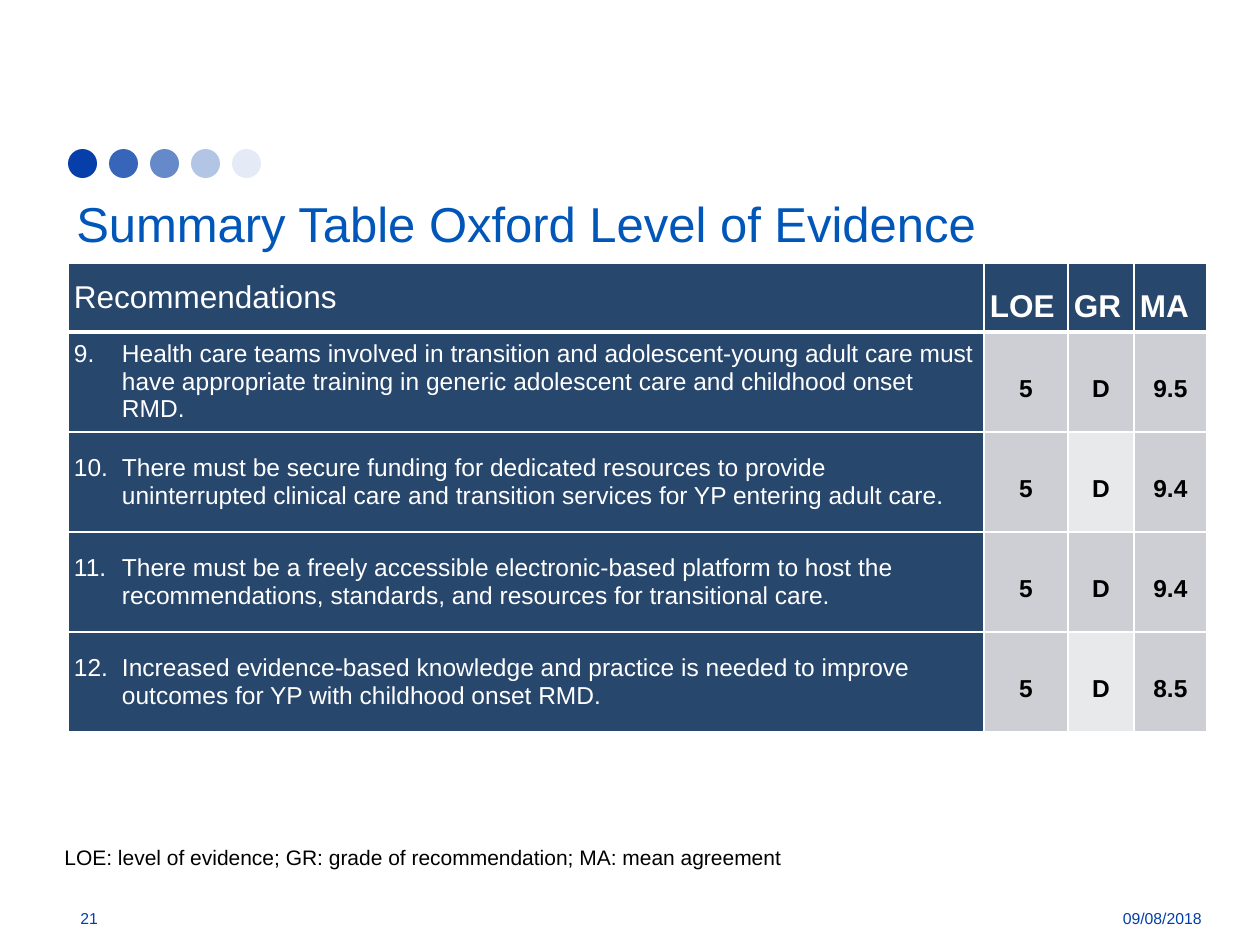
from dataclasses import dataclass
from typing import Any, NamedTuple

from lxml.etree import SubElement
from pptx import Presentation
from pptx.dml.color import RGBColor as Rgb
from pptx.enum.shapes import MSO_SHAPE as Preset
from pptx.enum.text import MSO_ANCHOR as Anchor, PP_ALIGN as Align
from pptx.oxml import parse_xml
from pptx.oxml.ns import nsdecls, qn
from pptx.util import Emu, Pt

EMU_PER_PX = 914400 / 126


@dataclass(frozen=True)
class Theme:
    face: str = "Arial"
    title: str = "0056B9"
    footer: str = "003FA8"
    dot: str = "063FA9"
    navy: str = "28476D"
    grey: str = "CDCFD4"
    pale: str = "E8E9EB"
    white: str = "FFFFFF"
    black: str = "000000"
    title_size: int = 28
    header_size: int = 18
    body_size: int = 14
    legend_size: int = 12
    footer_size: int = 9


class Box(NamedTuple):
    left: int
    top: int
    width: int
    height: int


@dataclass(frozen=True)
class Label:
    text: str
    box: Box
    size: int
    color: str
    align: Align = Align.LEFT
    wrap: bool = True


@dataclass(frozen=True)
class Recommendation:
    number: int
    text: str
    level: str
    grade: str
    agreement: str


@dataclass(frozen=True)
class CellStyle:
    fill: str
    color: str
    size: int
    bold: bool = False
    align: Align = Align.LEFT
    spacing: float | None = None
    bottom: int = 1
    top: int = 1


THEME = Theme()
LABELS = [
    Label("Summary Table Oxford Level of Evidence", Box(64, 179, 1148, 87), THEME.title_size, THEME.title),
    Label("21", Box(68, 893, 121, 50), THEME.footer_size, THEME.footer),
    Label("09/08/2018", Box(1045, 893, 169, 50), THEME.footer_size, THEME.footer, Align.RIGHT),
    Label(
        "LOE: level of evidence; GR: grade of recommendation; MA: mean agreement",
        Box(52, 838, 748, 38), THEME.legend_size, THEME.black, wrap=False,
    ),
]
HEADINGS = ["Recommendations", "LOE", "GR", "MA"]
RECOMMENDATIONS = [
    Recommendation(
        9,
        "Health care teams involved in transition and adolescent-young adult care must have "
        "appropriate training in generic adolescent care and childhood onset RMD.",
        "5", "D", "9.5",
    ),
    Recommendation(
        10,
        "There must be secure funding for dedicated resources to provide uninterrupted "
        "clinical care and transition services for YP entering adult care.",
        "5", "D", "9.4",
    ),
    Recommendation(
        11,
        "There must be a freely accessible electronic-based platform to host the "
        "recommendations, standards, and resources for transitional care.",
        "5", "D", "9.4",
    ),
    Recommendation(
        12,
        "Increased evidence-based knowledge and practice is needed to improve outcomes "
        "for YP with childhood onset RMD.",
        "5", "D", "8.5",
    ),
]
DOT_OPACITIES = [100, 80, 61, 30, 10]
FIRST_DOT = Box(68, 149, 29, 29)
DOT_PITCH = 41
COLUMN_WIDTHS = [916, 84, 66, 73]
ROW_HEIGHTS = [69] + [100] * len(RECOMMENDATIONS)
TABLE_BOX = Box(68, 263, sum(COLUMN_WIDTHS), sum(ROW_HEIGHTS))
CELL_INSET = 6
NUMBER_INDENT = 48


def px(length: int) -> Emu:
    return Emu(round(length * EMU_PER_PX))


def place(box: Box) -> list[Emu]:
    return [px(length) for length in box]


def apply(target: Any, formats: dict[str, Any]) -> None:
    for attribute, value in formats.items():
        setattr(target, attribute, value)


def write(paragraph: Any, text: str, size: int, color: str, bold: bool = False) -> None:
    run = paragraph.add_run()
    run.text = text
    apply(run.font, {"name": THEME.face, "size": Pt(size), "bold": bold})
    run.font.color.rgb = Rgb.from_string(color)


def draw_dots(slide: Any) -> None:
    for step, opacity in enumerate(DOT_OPACITIES):
        box = FIRST_DOT._replace(left=FIRST_DOT.left + step * DOT_PITCH)
        dot = slide.shapes.add_shape(Preset.OVAL, *place(box))
        dot.shadow.inherit = False
        dot.line.fill.background()
        dot.fill.solid()
        dot.fill.fore_color.rgb = Rgb.from_string(THEME.dot)
        tint = dot._element.spPr.find(qn("a:solidFill")).find(qn("a:srgbClr"))
        SubElement(tint, qn("a:alpha"), val=str(opacity * 1000))


def draw_label(slide: Any, label: Label) -> None:
    frame = slide.shapes.add_textbox(*place(label.box)).text_frame
    apply(frame, {"word_wrap": label.wrap, "vertical_anchor": Anchor.MIDDLE})
    paragraph = frame.paragraphs[0]
    paragraph.alignment = label.align
    write(paragraph, label.text, label.size, label.color)


def draw_borders(cell: Any, style: CellStyle) -> None:
    widths = {"lnL": 1, "lnR": 1, "lnT": style.top, "lnB": style.bottom}
    for order, (side, width) in enumerate(widths.items()):
        border = parse_xml(
            f'<a:{side} {nsdecls("a")} w="{Pt(width)}"><a:solidFill>'
            f'<a:srgbClr val="{THEME.white}"/></a:solidFill></a:{side}>'
        )
        cell._tc.get_or_add_tcPr().insert(order, border)


def number_paragraph(paragraph: Any, number: int) -> None:
    properties = paragraph._p.get_or_add_pPr()
    properties.set("marL", str(px(NUMBER_INDENT)))
    properties.set("indent", str(-px(NUMBER_INDENT)))
    SubElement(properties, qn("a:buFont"), typeface="+mj-lt")
    SubElement(properties, qn("a:buAutoNum"), type="arabicPeriod", startAt=str(number))


def fill_cell(cell: Any, text: str, style: CellStyle, number: int | None = None) -> None:
    apply(cell, {
        "margin_left": px(CELL_INSET), "margin_right": px(CELL_INSET),
        "margin_top": 0, "margin_bottom": 0, "vertical_anchor": Anchor.MIDDLE,
    })
    cell.fill.solid()
    cell.fill.fore_color.rgb = Rgb.from_string(style.fill)
    draw_borders(cell, style)
    paragraph = cell.text_frame.paragraphs[0]
    apply(paragraph, {"alignment": style.align, "line_spacing": style.spacing})
    if number is not None:
        number_paragraph(paragraph, number)
    write(paragraph, text, style.size, style.color, style.bold)


def draw_summary(slide: Any) -> None:
    summary = slide.shapes.add_table(len(ROW_HEIGHTS), len(COLUMN_WIDTHS), *place(TABLE_BOX)).table
    summary.horz_banding = False
    for column, width in zip(summary.columns, COLUMN_WIDTHS):
        column.width = px(width)
    for row, height in zip(summary.rows, ROW_HEIGHTS):
        row.height = px(height)
    for column, heading in enumerate(HEADINGS):
        spacing = 1.5 if column else None
        style = CellStyle(THEME.navy, THEME.white, THEME.header_size, column > 0, spacing=spacing, bottom=3)
        fill_cell(summary.cell(0, column), heading, style)
    for row, item in enumerate(RECOMMENDATIONS, 1):
        top = 3 if row == 1 else 1
        advice = CellStyle(THEME.navy, THEME.white, THEME.body_size, top=top)
        fill_cell(summary.cell(row, 0), item.text, advice, item.number)
        grade_fill = THEME.grey if row % 2 else THEME.pale
        scores = [(item.level, THEME.grey), (item.grade, grade_fill), (item.agreement, THEME.grey)]
        for column, (score, fill) in enumerate(scores, 1):
            style = CellStyle(fill, THEME.black, THEME.body_size, True, Align.CENTER, 1.5, top=top)
            fill_cell(summary.cell(row, column), score, style)


def main() -> None:
    deck = Presentation()
    apply(deck, {"slide_width": px(1260), "slide_height": px(945)})
    slide = deck.slides.add_slide(deck.slide_layouts[6])
    draw_dots(slide)
    draw_summary(slide)
    for label in LABELS:
        draw_label(slide, label)
    deck.save("out.pptx")


if __name__ == "__main__":
    main()
